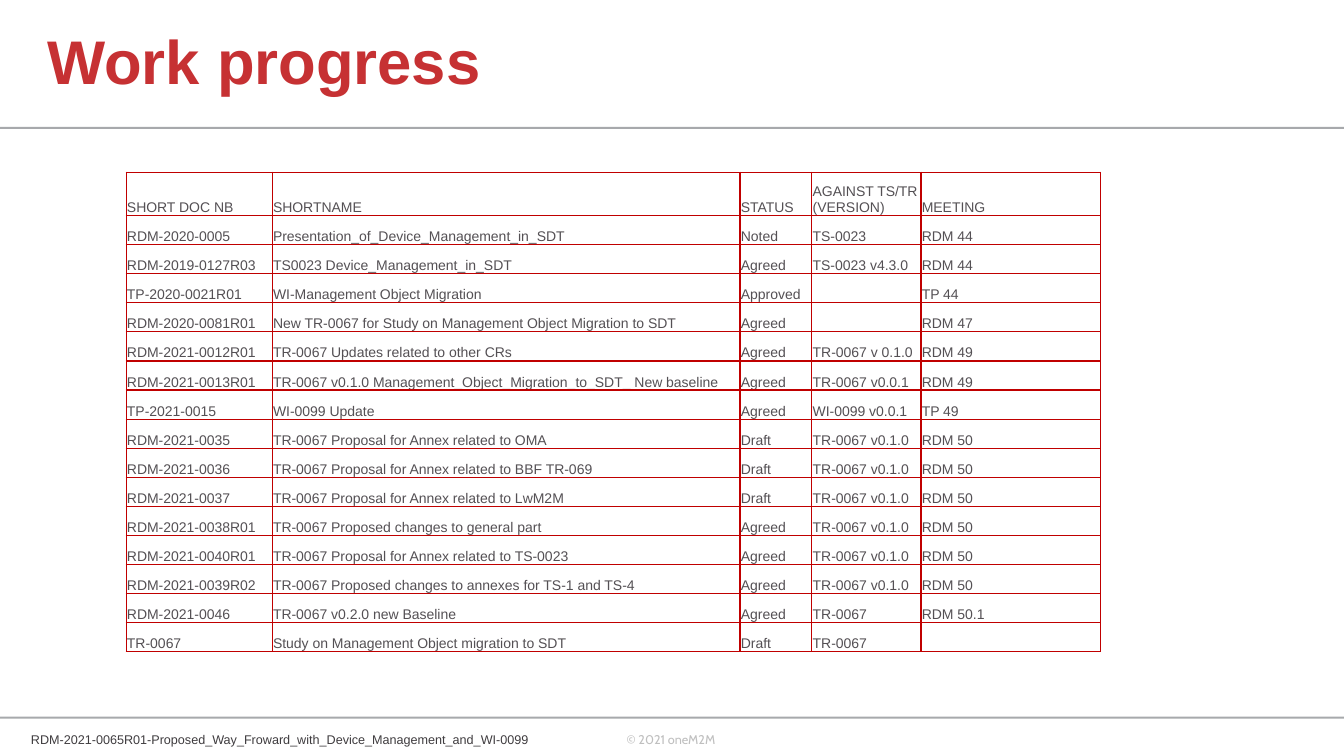
from pptx import Presentation
from pptx import util as u
from pptx.dml.color import RGBColor
from pptx.enum import shapes, text
from pptx.oxml import ns
from lxml import etree

Cm = u.Cm
WHITE = RGBColor(0xFF, 0xFF, 0xFF)
RULE_GREY = RGBColor(0xA7, 0xA9, 0xAC)
COPYRIGHT_GREY = RGBColor(0xBF, 0xBF, 0xBF)
FOOTER_GREY = RGBColor(0x3F, 0x3C, 0x3F)
TITLE_RED = RGBColor(0xC6, 0x31, 0x33)
CELL_GREY = RGBColor(0x54, 0x50, 0x54)
BORDER_RED = RGBColor(0xC0, 0x00, 0x00)

SLIDE_WIDTH, SLIDE_HEIGHT = 33.87, 19.05
TABLE_LEFT, TABLE_TOP = 3.18, 4.34
COLUMN_WIDTHS = [3.68, 11.79, 1.81, 2.75, 4.52]
HEADER_HEIGHT, BODY_HEIGHT = 1.09, 11.0

CELL_FORMAT = {
    "margin_left": Cm(0.02),
    "margin_right": Cm(0.02),
    "margin_top": Cm(0.02),
    "margin_bottom": 0,
    "vertical_anchor": text.MSO_ANCHOR.BOTTOM,
}

DOCUMENTS = [
    ("SHORT DOC NB", "SHORTNAME", "STATUS", "AGAINST TS/TR (VERSION)", "MEETING"),
    ("RDM-2020-0005", "Presentation_of_Device_Management_in_SDT", "Noted", "TS-0023", "RDM 44"),
    ("RDM-2019-0127R03", "TS0023 Device_Management_in_SDT", "Agreed", "TS-0023 v4.3.0", "RDM 44"),
    ("TP-2020-0021R01", "WI-Management Object Migration", "Approved", "", "TP 44"),
    ("RDM-2020-0081R01", "New TR-0067 for Study on Management Object Migration to SDT",
     "Agreed", "", "RDM 47"),
    ("RDM-2021-0012R01", "TR-0067 Updates related to other CRs", "Agreed", "TR-0067 v 0.1.0", "RDM 49"),
    ("RDM-2021-0013R01", "TR-0067 v0.1.0 Management_Object_Migration_to_SDT_ New baseline",
     "Agreed", "TR-0067 v0.0.1", "RDM 49"),
    ("TP-2021-0015", "WI-0099 Update", "Agreed", "WI-0099 v0.0.1", "TP 49"),
    ("RDM-2021-0035", "TR-0067 Proposal for Annex related to OMA", "Draft", "TR-0067 v0.1.0", "RDM 50"),
    ("RDM-2021-0036", "TR-0067 Proposal for Annex related to BBF TR-069",
     "Draft", "TR-0067 v0.1.0", "RDM 50"),
    ("RDM-2021-0037", "TR-0067 Proposal for Annex related to LwM2M", "Draft", "TR-0067 v0.1.0", "RDM 50"),
    ("RDM-2021-0038R01", "TR-0067 Proposed changes to general part", "Agreed", "TR-0067 v0.1.0", "RDM 50"),
    ("RDM-2021-0040R01", "TR-0067 Proposal for Annex related to TS-0023",
     "Agreed", "TR-0067 v0.1.0", "RDM 50"),
    ("RDM-2021-0039R02", "TR-0067 Proposed changes to annexes for TS-1 and TS-4",
     "Agreed", "TR-0067 v0.1.0", "RDM 50"),
    ("RDM-2021-0046", "TR-0067 v0.2.0 new Baseline", "Agreed", "TR-0067", "RDM 50.1"),
    ("TR-0067", "Study on Management Object migration to SDT", "Draft", "TR-0067", ""),
]


def set_attributes(target, values):
    for name, value in values.items():
        setattr(target, name, value)


def write(paragraph, wording, color, **font_format):
    run = paragraph.add_run()
    run.text = wording
    set_attributes(run.font, font_format)
    run.font.color.rgb = color


def add_rule(slide, top):
    rule = slide.shapes.add_shape(
        shapes.MSO_SHAPE.RECTANGLE, 0, Cm(top), Cm(SLIDE_WIDTH), Cm(0.05))
    rule.shadow.inherit = False
    rule.fill.solid()
    rule.fill.fore_color.rgb = RULE_GREY
    rule.line.fill.background()


def add_label(slide, box, wording, color, frame_format, **font_format):
    frame = slide.shapes.add_textbox(*map(Cm, box)).text_frame
    set_attributes(frame, frame_format)
    write(frame.paragraphs[0], wording, color, **font_format)
    return frame.paragraphs[0]


def add_borders(cell):
    properties = cell._tc.get_or_add_tcPr()
    for position, side in enumerate(("lnL", "lnR", "lnT", "lnB")):
        line = etree.Element(ns.qn(f"a:{side}"), w=str(u.Pt(1)))
        fill = etree.SubElement(line, ns.qn("a:solidFill"))
        etree.SubElement(fill, ns.qn("a:srgbClr"), val=str(BORDER_RED))
        properties.insert(position, line)


def fill_cell(cell, wording):
    set_attributes(cell, CELL_FORMAT)
    cell.fill.solid()
    cell.fill.fore_color.rgb = WHITE
    add_borders(cell)
    paragraph = cell.text_frame.paragraphs[0]
    if wording:
        write(paragraph, wording, CELL_GREY, name="Arial", size=u.Pt(10))
    else:
        # An empty cell needs the small size too, or its row grows.
        etree.SubElement(paragraph._p, ns.qn("a:endParaRPr"), sz="1000")


def add_document_table(slide):
    body_rows = len(DOCUMENTS) - 1
    row_heights = [HEADER_HEIGHT] + [BODY_HEIGHT / body_rows] * body_rows
    table = slide.shapes.add_table(
        len(DOCUMENTS), len(COLUMN_WIDTHS), Cm(TABLE_LEFT), Cm(TABLE_TOP),
        Cm(sum(COLUMN_WIDTHS)), Cm(HEADER_HEIGHT + BODY_HEIGHT)).table
    set_attributes(table, {"first_row": False, "horz_banding": False})
    for column, width in zip(table.columns, COLUMN_WIDTHS):
        column.width = Cm(width)
    for row, height, document in zip(table.rows, row_heights, DOCUMENTS):
        row.height = Cm(height)
        for cell, wording in zip(row.cells, document):
            fill_cell(cell, wording)


def main():
    deck = Presentation()
    deck.slide_width, deck.slide_height = Cm(SLIDE_WIDTH), Cm(SLIDE_HEIGHT)
    slide = deck.slides.add_slide(deck.slide_layouts[6])

    for top in (3.2, 18.06):
        add_rule(slide, top)
    add_label(slide, (15.54, 18.31, 2.77, 1.02), "© 2021 oneM2M", COPYRIGHT_GREY,
              {"word_wrap": False}, name="Cabin", size=u.Pt(9))
    add_label(slide, (0.53, 18.31, 15.19, 0.64),
              "RDM-2021-0065R01-Proposed_Way_Froward_with_Device_Management_and_WI-0099",
              FOOTER_GREY, {"word_wrap": True}, name="Arial", size=u.Pt(9))
    title = add_label(slide, (0.94, 0, 26.01, 3.25), "Work progress", TITLE_RED,
                      {"word_wrap": True, "vertical_anchor": text.MSO_ANCHOR.MIDDLE},
                      name="Arial", size=u.Pt(44), bold=True)
    title.line_spacing = 0.9
    add_document_table(slide)

    deck.save("out.pptx")


if __name__ == "__main__":
    main()
